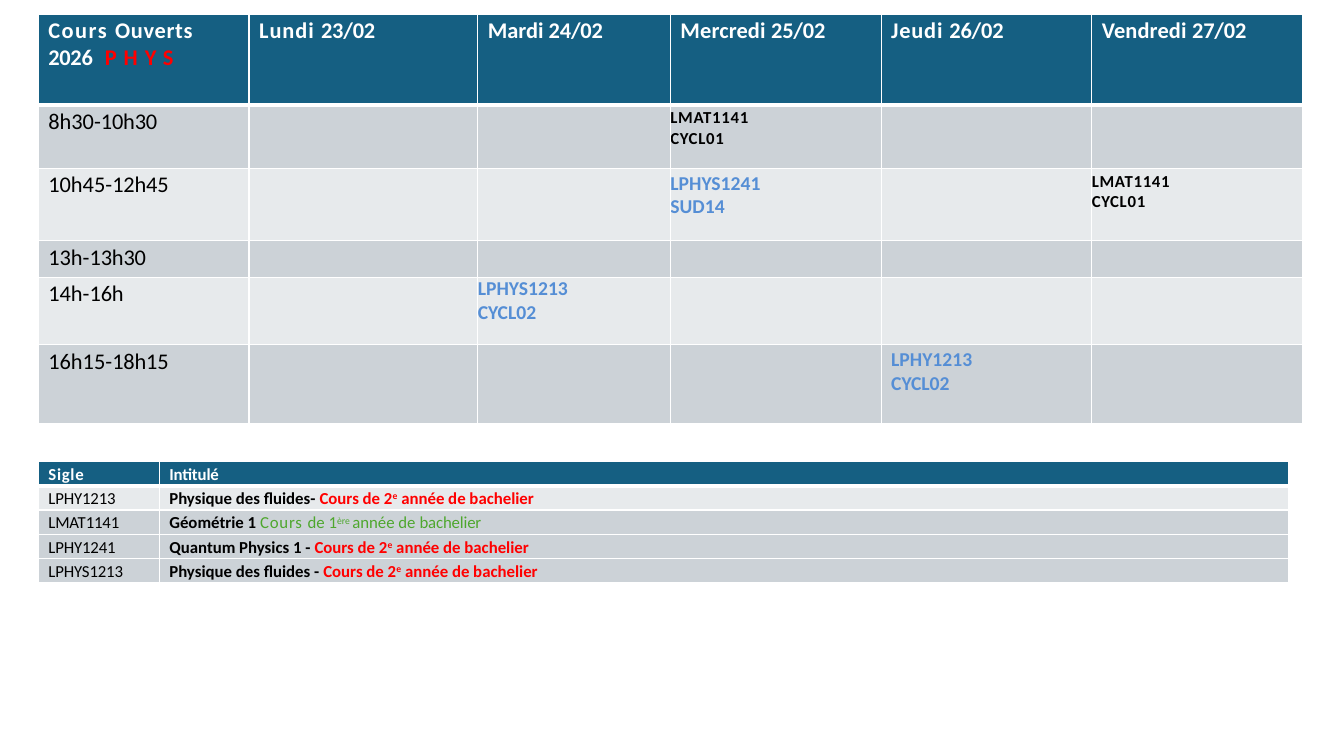
"""Build the weekly schedule of open physics courses with its course key."""
from dataclasses import dataclass

from lxml.etree import SubElement
from pptx import Presentation
from pptx.dml.color import RGBColor
from pptx.oxml.ns import qn
from pptx.slide import Slide
from pptx.table import Table, _Cell as Cell
from pptx.util import Inches, Pt

WHITE = RGBColor(0xFF, 0xFF, 0xFF)
BLACK = RGBColor(0, 0, 0)
RED = RGBColor(0xFF, 0, 0)
GREEN = RGBColor(0x4E, 0xA7, 0x2D)
BLUE = RGBColor(0x55, 0x8E, 0xD5)
TEAL = RGBColor(0x15, 0x5F, 0x82)
GREY = RGBColor(0xCC, 0xD2, 0xD7)
PALE = RGBColor(0xE7, 0xEA, 0xEC)


@dataclass(frozen=True)
class Span:
    text: str
    color: RGBColor = BLACK
    bold: bool = False
    spacing: float = 0
    raised: int = 0


@dataclass(frozen=True)
class Course:
    row: int
    column: int
    code: str
    room: str
    color: RGBColor
    size: float
    spacing: float = 0
    left: float = 0
    top: float = 0.03


DAYS = [
    ("Lundi ", 0.7, "23/02"),
    ("Mardi ", 0, "24/02"),
    ("Mercredi ", 0.1, "25/02"),
    ("Jeudi ", 0.6, "26/02"),
    ("Vendredi ", 0.1, "27/02"),
]
HOURS = [("8h30-", "10h30"), ("10h45-", "12h45"), ("13h-", "13h30"), ("14h-", "16h"), ("16h15-", "18h15")]
COURSES = [
    Course(1, 3, "LMAT1141", "CYCL01", BLACK, 12, 0.5),
    Course(2, 3, "LPHYS1241", "SUD14", BLUE, 14),
    Course(2, 5, "LMAT1141", "CYCL01", BLACK, 12, 0.5),
    Course(4, 2, "LPHYS1213", "CYCL02", BLUE, 14, top=0),
    Course(5, 4, "LPHY1213", "CYCL02", BLUE, 14, left=0.1),
]
SECOND_YEAR = [
    Span("Cours de 2", RED, True),
    Span("e", RED, True, raised=30),
    Span(" année de bachelier", RED, True),
]
FIRST_YEAR = [
    Span("Cours ", GREEN, spacing=0.6),
    Span("de 1", GREEN),
    Span("ère ", GREEN, raised=24),
    Span("année de ", GREEN),
    Span("bachelier", GREEN, spacing=-0.1),
]
COURSE_KEY = [
    ("LPHY1213", "Physique des fluides- ", SECOND_YEAR),
    ("LMAT1141", "Géométrie 1 ", FIRST_YEAR),
    ("LPHY1241", "Quantum Physics 1 - ", SECOND_YEAR),
    ("LPHYS1213", "Physique des fluides - ", SECOND_YEAR),
]


def style_cell(cell: Cell, fill: RGBColor, top: float, bottom: float) -> None:
    """Fill a cell, draw its white borders and remove its margins."""
    cell.margin_left = cell.margin_right = cell.margin_top = cell.margin_bottom = 0
    properties = cell._tc.get_or_add_tcPr()
    for side, width in (("L", 1), ("R", 1), ("T", top), ("B", bottom)):
        line = SubElement(properties, qn(f"a:ln{side}"), w=str(Pt(width)))
        solid = SubElement(line, qn("a:solidFill"))
        SubElement(solid, qn("a:srgbClr"), val=str(WHITE))
    cell.fill.solid()
    cell.fill.fore_color.rgb = fill
    SubElement(cell.text_frame.paragraphs[0]._p, qn("a:endParaRPr"), sz="1200")


def add_grid(slide: Slide, left: float, top: float, widths: list[float],
             heights: list[float], fills: list[RGBColor]) -> Table:
    """Add a styled table with one fill colour for each row."""
    table = slide.shapes.add_table(
        len(heights), len(widths), Inches(left), Inches(top),
        Inches(sum(widths)), Inches(sum(heights))).table
    table.horz_banding = False
    for column, width in zip(table.columns, widths):
        column.width = Inches(width)
    for index, (row, height, fill) in enumerate(zip(table.rows, heights, fills)):
        row.height = Inches(height)
        for cell in row.cells:
            style_cell(cell, fill, 3 if index == 1 else 1, 3 if index == 0 else 1)
    return table


def write(cell: Cell, spans: list[Span], size: float, left: float = 0.1, top: float = 0.03) -> None:
    """Write spans in a cell, with a line break before each span that follows a newline."""
    cell.margin_left, cell.margin_top = Inches(left), Inches(top)
    paragraph = cell.text_frame.paragraphs[0]
    for span in spans:
        if span.text.startswith("\n"):
            paragraph.add_line_break()
        run = paragraph.add_run()
        run.text = span.text.lstrip("\n")
        run.font.name = "Calibri"
        run.font.size = Pt(size)
        run.font.bold = span.bold
        run.font.color.rgb = span.color
        properties = run._r.get_or_add_rPr()
        properties.set("spc", str(round(span.spacing * 100)))
        if span.raised:
            properties.set("baseline", str(span.raised * 1000))


def add_schedule(slide: Slide) -> None:
    """Add the weekly timetable."""
    table = add_grid(slide, 0.38, 0.14, [2.09, 2.27, 1.91, 2.09, 2.09, 2.09],
                     [0.9, 0.63, 0.72, 0.36, 0.67, 0.78],
                     [TEAL, GREY, PALE, GREY, PALE, GREY])
    corner = table.cell(0, 0)
    write(corner, [Span("Cours ", WHITE, True, 1.1), Span("Ouverts ", WHITE, True, 0.5),
                   Span("2026", WHITE, True, -0.2), Span(" PHYS", RED, True, 5)], 16)
    corner.margin_right = Inches(0.4)
    for column, (day, spacing, date) in enumerate(DAYS, 1):
        write(table.cell(0, column), [Span(day, WHITE, True, spacing), Span(date, WHITE, True, -0.1)], 16)
    for row, (start, end) in enumerate(HOURS, 1):
        write(table.cell(row, 0), [Span(start), Span(end, spacing=-0.1)], 16)
    for course in COURSES:
        lines = [Span(text, course.color, True, course.spacing)
                 for text in (course.code, "\n" + course.room)]
        write(table.cell(course.row, course.column), lines, course.size, course.left, course.top)


def add_course_key(slide: Slide) -> None:
    """Add the table of course codes and titles."""
    table = add_grid(slide, 0.38, 4.58, [1.2, 11.2], [0.24] * 5, [TEAL, PALE, GREY, GREY, GREY])
    write(table.cell(0, 0), [Span("Sigle", WHITE, True, 0.5)], 12)
    write(table.cell(0, 1), [Span("Intitulé", WHITE, True, -0.1)], 12)
    for row, (code, title, year) in enumerate(COURSE_KEY, 1):
        write(table.cell(row, 0), [Span(code, spacing=-0.1)], 12)
        write(table.cell(row, 1), [Span(title, bold=True), *year], 12)


def main() -> None:
    """Create and save the presentation."""
    presentation = Presentation()
    presentation.slide_width = Inches(13.33)
    presentation.slide_height = Inches(7.5)
    slide = presentation.slides.add_slide(presentation.slide_layouts[6])
    add_schedule(slide)
    add_course_key(slide)
    presentation.save("out.pptx")


if __name__ == "__main__":
    main()
